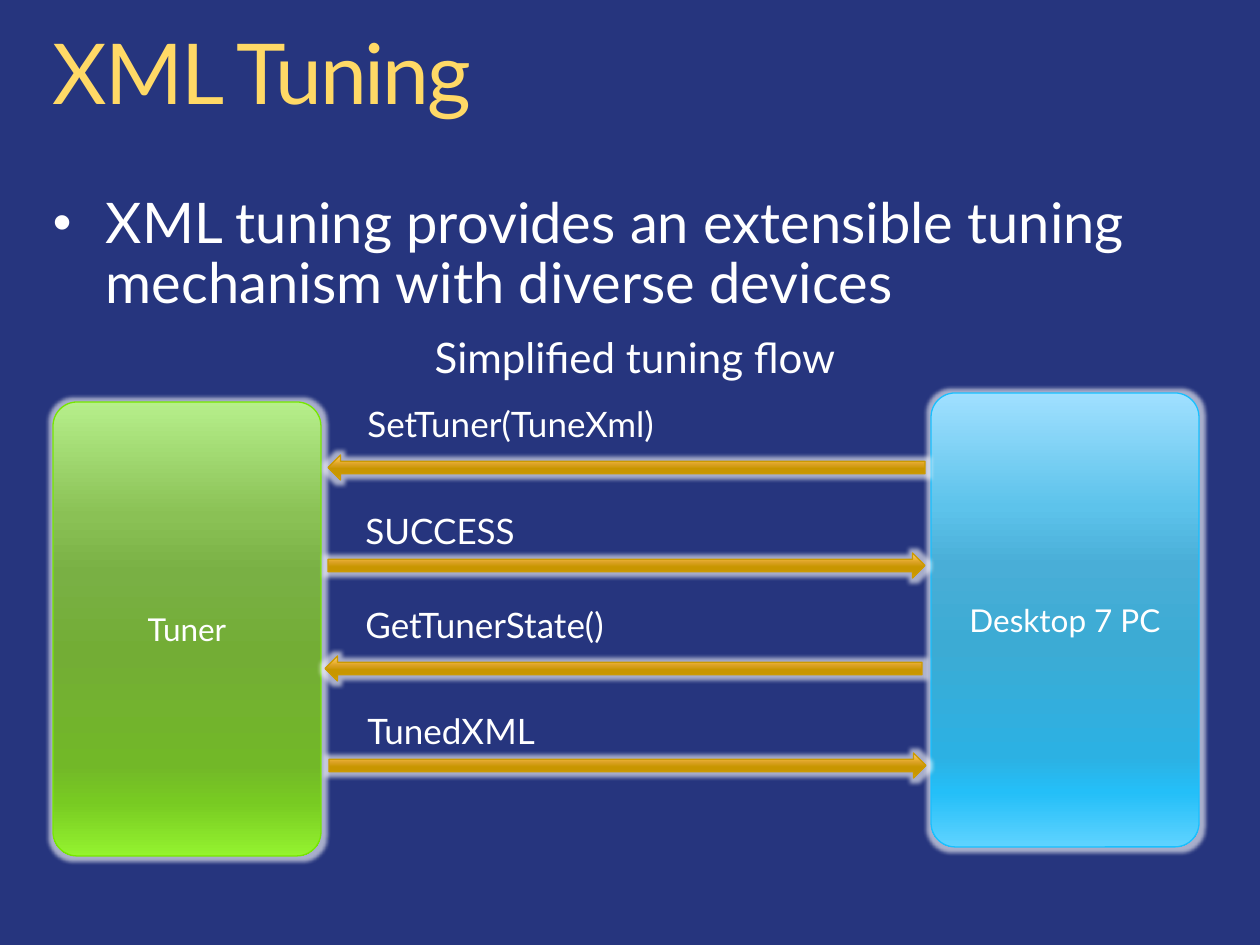
from dataclasses import dataclass

import lxml.etree
import pptx
import pptx.dml.color
import pptx.enum.shapes
import pptx.enum.text
import pptx.oxml.ns
import pptx.util

PX = 914400 / 126
FONT = "Lato"
COLORS = {
    "background": "26357E",
    "title": "FFD966",
    "text": "FFFFFF",
    "tuner line": "77E700",
    "computer line": "18C0FF",
    "arrow line": "CC9A00",
}
STOPS = (0, 25, 38, 55, 80, 88, 100)
GRADIENTS = {
    "tuner": "B6EF8B 8AC155 79B044 73AD35 72B828 78CA22 94F32F".split(),
    "computer": "A0E0FF 5DC3EB 49AED7 3CABD4 2CB1E3 24BFF8 5FD3FF".split(),
    "arrow": "FFD390 ECB335 DAA123 C89600 C69500 D19D00 FFC018".split(),
}
SHAPES = pptx.enum.shapes.MSO_SHAPE
ALIGN = pptx.enum.text.PP_ALIGN


@dataclass(frozen=True)
class Device:
    name: str
    left: int
    top: int
    style: str


@dataclass(frozen=True)
class Message:
    text: str
    text_left: int
    text_top: int
    arrow_left: int
    arrow_top: int
    direction: SHAPES


DEVICES = (
    Device("Tuner", 53, 402, "tuner"),
    Device("Desktop 7 PC", 931, 393, "computer"),
)
MESSAGES = (
    Message("SetTuner(TuneXml)", 355, 396, 328, 455, SHAPES.LEFT_ARROW),
    Message("SUCCESS", 353, 503, 328, 553, SHAPES.RIGHT_ARROW),
    Message("GetTunerState()", 353, 597, 325, 656, SHAPES.LEFT_ARROW),
    Message("TunedXML", 355, 703, 329, 753, SHAPES.RIGHT_ARROW),
)


def px(*lengths: int) -> list[int]:
    return [round(length * PX) for length in lengths]


def rgb(name: str) -> pptx.dml.color.RGBColor:
    return pptx.dml.color.RGBColor.from_string(COLORS[name])


def add_node(parent, tag: str, **attributes: str):
    node = lxml.etree.SubElement(parent, pptx.oxml.ns.qn(tag))
    for key, value in attributes.items():
        node.set(key, value)
    return node


def write(shape, text: str, *, size: int, color: str = "text", align=ALIGN.LEFT,
          spacing: float = 1.0, tracking: int = 0, bullet: bool = False) -> None:
    """Put one formatted paragraph into a shape."""
    para = shape.text_frame.paragraphs[0]
    para.alignment = align
    para.line_spacing = spacing
    if bullet:
        properties = para._p.get_or_add_pPr()
        indent = px(53)[0]
        properties.set("marL", str(indent))
        properties.set("indent", str(-indent))
        add_node(add_node(properties, "a:buClr"), "a:srgbClr", val=COLORS[color])
        add_node(properties, "a:buSzPct", val="95000")
        add_node(properties, "a:buFont", typeface="Arial")
        add_node(properties, "a:buChar", char="•")
    span = para.add_run()
    span.text = text
    span.font.name = FONT
    span.font.size = pptx.util.Pt(size)
    span.font.color.rgb = rgb(color)
    if tracking:
        span._r.get_or_add_rPr().set("spc", str(tracking))


def add_text(page, text: str, left: int, top: int, width: int, height: int,
             *, inset: bool = True, **text_format) -> None:
    box = page.shapes.add_textbox(*px(left, top, width, height))
    frame = box.text_frame
    frame.word_wrap = True
    if not inset:
        frame.margin_left = frame.margin_right = 0
        frame.margin_top = frame.margin_bottom = 0
    write(box, text, **text_format)


def add_glossy(page, kind: SHAPES, left: int, top: int, width: int, height: int,
               style: str):
    """Add a shape with a vertical gradient and a soft white glow."""
    shape = page.shapes.add_shape(kind, *px(left, top, width, height))
    shape.fill.gradient()
    shape.fill.gradient_angle = 270
    properties = shape._element.spPr
    stop_list = properties.find(".//" + pptx.oxml.ns.qn("a:gsLst"))
    for stop in list(stop_list):
        stop_list.remove(stop)
    for position, color in zip(STOPS, GRADIENTS[style]):
        stop = add_node(stop_list, "a:gs", pos=str(position * 1000))
        add_node(stop, "a:srgbClr", val=color)
    shape.line.color.rgb = rgb(style + " line")
    shape.line.width = pptx.util.Pt(0.75)
    shape.shadow.inherit = False
    effects = properties.find(pptx.oxml.ns.qn("a:effectLst"))
    glow = add_node(effects, "a:glow", rad=str(pptx.util.Pt(5)))
    glow_color = add_node(glow, "a:srgbClr", val=COLORS["text"])
    add_node(glow_color, "a:alpha", val="60000")
    return shape


def add_device(page, device: Device) -> None:
    shape = add_glossy(page, SHAPES.ROUNDED_RECTANGLE, device.left, device.top,
                       268, 454, device.style)
    shape.adjustments[0] = 0.09
    shape.text_frame.word_wrap = True
    shape.text_frame.vertical_anchor = pptx.enum.text.MSO_ANCHOR.MIDDLE
    write(shape, device.name, size=18, align=ALIGN.CENTER)


def add_message(page, message: Message) -> None:
    add_glossy(page, message.direction, message.arrow_left, message.arrow_top,
               597, 25, "arrow")
    add_text(page, message.text, message.text_left, message.text_top, 525, 55, size=20)


def main() -> None:
    deck = pptx.Presentation()
    deck.slide_width, deck.slide_height = px(1260, 945)
    page = deck.slides.add_slide(deck.slide_layouts[6])
    page.background.fill.solid()
    page.background.fill.fore_color.rgb = rgb("background")

    # Title and statement
    add_text(page, "XML Tuning", 53, 32, 1154, 92, inset=False,
             size=48, color="title", spacing=0.9, tracking=-120)
    add_text(page, "XML tuning provides an extensible tuning mechanism with diverse devices",
             53, 195, 1154, 122, inset=False, size=32, spacing=0.9, bullet=True)

    # Tuning flow
    for device in DEVICES:
        add_device(page, device)
    for message in MESSAGES:
        add_message(page, message)
    add_text(page, "Simplified tuning flow", 327, 325, 616, 63,
             size=24, align=ALIGN.CENTER)

    deck.save("out.pptx")


if __name__ == "__main__":
    main()
